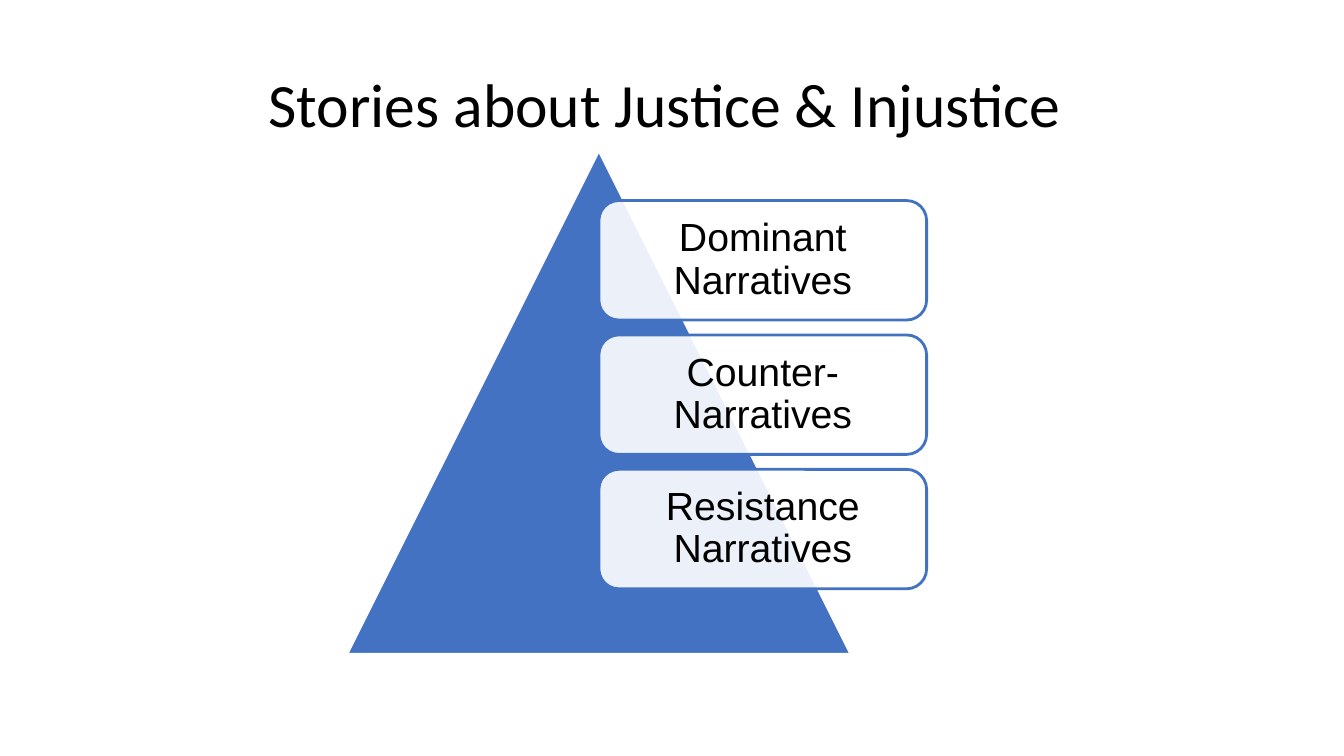
"""Build a slide with a triangle and three stacked narrative labels."""
from lxml import etree
from pptx import Presentation
from pptx.dml.color import RGBColor
from pptx.enum.shapes import MSO_SHAPE as SHAPE
from pptx.enum.text import MSO_ANCHOR as ANCHOR, PP_ALIGN as ALIGN
from pptx.oxml.ns import qn
from pptx.util import Inches, Pt

TITLE = "Stories about Justice & Injustice "
NARRATIVES = ["Dominant Narratives", "Counter-Narratives", "Resistance Narratives"]

BLACK = RGBColor(0x00, 0x00, 0x00)
WHITE = RGBColor(0xFF, 0xFF, 0xFF)
BLUE = RGBColor(0x43, 0x72, 0xC3)

TITLE_FONT = {"name": "Calibri", "size": Pt(44), "bold": False}
LABEL_FONT = {"name": "Arial", "size": Pt(28)}

WIDTH, HEIGHT = 13.33, 7.5
TITLE_TOP, TITLE_HEIGHT = 0.64, 0.85
SIDE = HEIGHT * 2 / 3
LEFT, TOP = 3.44, TITLE_TOP + TITLE_HEIGHT
LABEL_LEFT, LABEL_TOP = LEFT + SIDE / 2, TOP + SIDE / 10
LABEL_WIDTH = SIDE * 0.65
PITCH = SIDE * 4 / 15
LABEL_HEIGHT = PITCH * 8 / 9


def set_text(sp, text, font, inset_x, inset_y):
    tf = sp.text_frame
    frame = {"word_wrap": True, "vertical_anchor": ANCHOR.MIDDLE,
             "margin_left": Inches(inset_x), "margin_right": Inches(inset_x),
             "margin_top": Inches(inset_y), "margin_bottom": Inches(inset_y)}
    for name, value in frame.items():
        setattr(tf, name, value)
    p = tf.paragraphs[0]
    p.alignment, p.line_spacing = ALIGN.CENTER, 0.9
    r = p.add_run()
    r.text = text
    for name, value in font.items():
        setattr(r.font, name, value)
    r.font.color.rgb = BLACK


def add_shape(shapes, kind, box, fill, line):
    sp = shapes.add_shape(kind, *map(Inches, box))
    sp.shadow.inherit = False
    sp.fill.solid()
    sp.fill.fore_color.rgb = fill
    sp.line.color.rgb = line
    sp.line.width = Pt(2)
    return sp


def set_opacity(sp, percent):
    color = sp.fill._xPr.find(qn("a:solidFill"))[0]
    etree.SubElement(color, qn("a:alpha")).set("val", str(percent * 1000))


def main():
    prs = Presentation()
    prs.slide_width, prs.slide_height = Inches(WIDTH), Inches(HEIGHT)
    s = prs.slides.add_slide(prs.slide_layouts[5])

    title = s.shapes.title
    title.left, title.top = 0, Inches(TITLE_TOP)
    title.width, title.height = prs.slide_width, Inches(TITLE_HEIGHT)
    set_text(title, TITLE, TITLE_FONT, 0.1, 0.05)

    shapes = s.shapes.add_group_shape().shapes
    add_shape(shapes, SHAPE.ISOSCELES_TRIANGLE, (LEFT, TOP, SIDE, SIDE), BLUE, WHITE)
    for i, text in enumerate(NARRATIVES):
        box = (LABEL_LEFT, LABEL_TOP + i * PITCH, LABEL_WIDTH, LABEL_HEIGHT)
        sp = add_shape(shapes, SHAPE.ROUNDED_RECTANGLE, box, WHITE, BLUE)
        set_opacity(sp, 90)
        set_text(sp, text, LABEL_FONT, 0.12, 0.12)

    prs.save("out.pptx")


if __name__ == "__main__":
    main()
